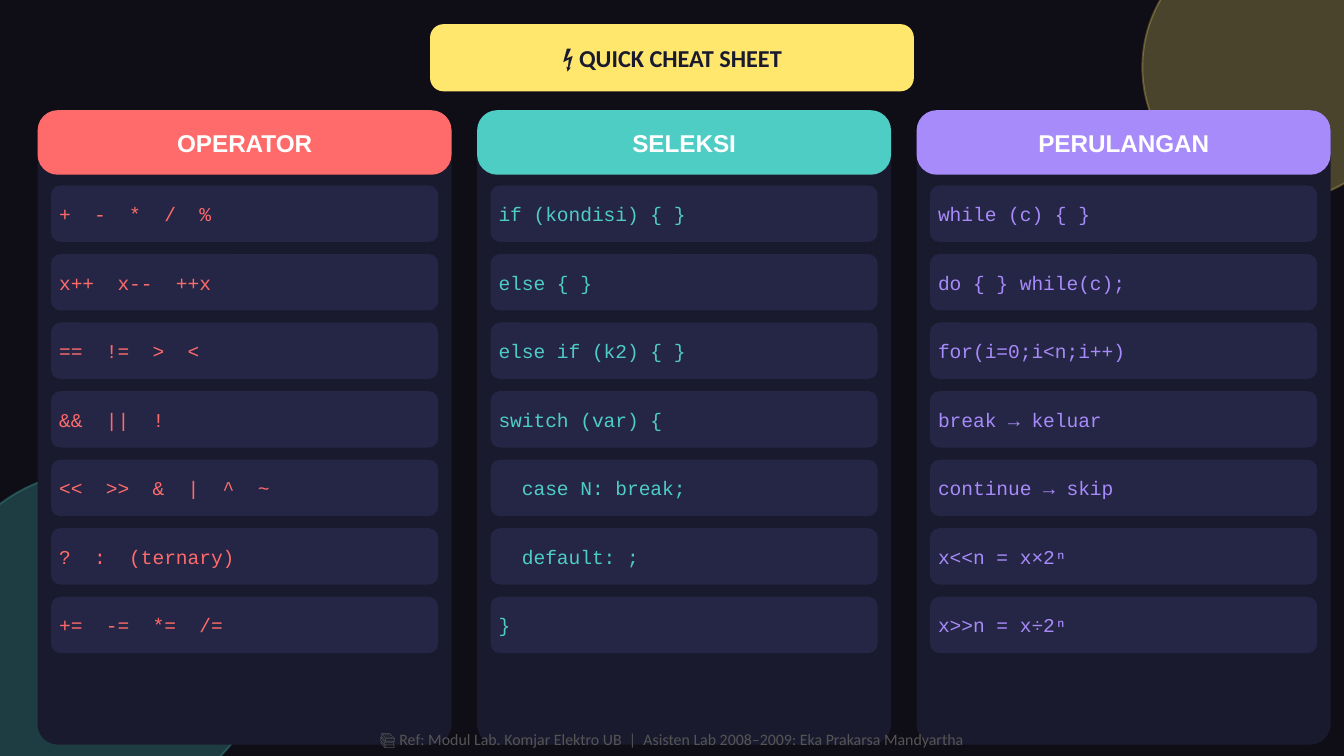
from pptx import Presentation
from pptx.dml.color import RGBColor
from pptx.enum.shapes import MSO_SHAPE as SHAPE
from pptx.enum.text import MSO_ANCHOR as ANCHOR, MSO_AUTO_SIZE as AUTO, PP_ALIGN as ALIGN
from pptx.oxml.ns import qn
from pptx.util import Inches, Pt
from lxml import etree

COLORS = {
    "bg": "0F0E17", "panel": "1A1A2E", "row": "252545", "white": "FFFFFF",
    "red": "FF6B6B", "teal": "4ECDC4", "violet": "A78BFA", "yellow": "FFE66D",
    "gray": "555555",
}
TITLE = "⚡ QUICK CHEAT SHEET"
FOOTER = "📚 Ref: Modul Lab. Komjar Elektro UB  |  Asisten Lab 2008–2009: Eka Prakarsa Mandyartha"
COLUMNS = [
    ("OPERATOR", "red", [
        "+  -  *  /  %", "x++  x--  ++x", "==  !=  >  <", "&&  ||  !",
        "<<  >>  &  |  ^  ~", "?  :  (ternary)", "+=  -=  *=  /=",
    ]),
    ("SELEKSI", "teal", [
        "if (kondisi) { }", "else { }", "else if (k2) { }", "switch (var) {",
        "  case N: break;", "  default: ;", "}",
    ]),
    ("PERULANGAN", "violet", [
        "while (c) { }", "do { } while(c);", "for(i=0;i<n;i++)", "break → keluar",
        "continue → skip", "x<<n = x×2ⁿ", "x>>n = x÷2ⁿ",
    ]),
]
CIRCLES = [(-0.5, 3.5, 2.5, "teal"), (8.5, -0.5, 2, "yellow")]
BANNER = (3.2, 0.18, 3.6, 0.5)
SLIDE_W = 10
SLIDE_H = SLIDE_W * 9 / 16
LEFT, TOP, COL_W, COL_H, COL_STEP = 0.28, 0.82, 3.08, 4.72, 3.27
HEAD_H, ROW_TOP, ROW_H, ROW_STEP = 0.48, 1.38, 0.42, 0.51
ROW_INSET, TEXT_INSET, TEXT_PAD = 0.1, 0.06, 0.02


def rgb(name):
    return RGBColor.from_string(COLORS[name])


def add_card(s, x, y, w, h, radius, color):
    sp = s.shapes.add_shape(SHAPE.ROUNDED_RECTANGLE, *map(Inches, (x, y, w, h)))
    sp.adjustments[0] = radius / min(w, h)
    sp.shadow.inherit = False
    sp.fill.solid()
    sp.fill.fore_color.rgb = rgb(color)
    sp.line.fill.background()
    return sp


def add_circle(s, x, y, size, color):
    sp = s.shapes.add_shape(SHAPE.OVAL, *map(Inches, (x, y, size, size)))
    sp.shadow.inherit = False
    for fill in (sp.fill, sp.line.fill):
        fill.solid()
        fill.fore_color.rgb = rgb(color)
    sp.line.width = Pt(1)
    for clr in sp.element.iter(qn("a:srgbClr")):
        etree.SubElement(clr, qn("a:alpha"), val="25000")


def set_text(sp, text, size, font, color, bold=False, align=ALIGN.CENTER):
    tf = sp.text_frame
    tf.word_wrap = True
    tf.auto_size = AUTO.NONE
    tf.vertical_anchor = ANCHOR.MIDDLE
    tf.margin_left = tf.margin_right = tf.margin_top = tf.margin_bottom = 0
    tf.text = text
    p = tf.paragraphs[0]
    p.alignment = align
    r = p.runs[0]
    r.font.size = Pt(size)
    r.font.name = font
    r.font.bold = bold
    r.font.color.rgb = rgb(color)


def add_label(s, x, y, w, h, *args, **kwargs):
    sp = s.shapes.add_textbox(*map(Inches, (x, y, w, h)))
    set_text(sp, *args, **kwargs)


def add_column(s, x, heading, color, rows):
    add_card(s, x, TOP, COL_W, COL_H, 0.15, "panel")
    add_card(s, x, TOP, COL_W, HEAD_H, 0.15, color)
    add_label(s, x, TOP, COL_W, HEAD_H, heading, 13, "Arial", "white", bold=True)
    row_x, row_w = x + ROW_INSET, COL_W - 2 * ROW_INSET
    for i, code in enumerate(rows):
        y = ROW_TOP + i * ROW_STEP
        add_card(s, row_x, y, row_w, ROW_H, 0.07, "row")
        add_label(s, row_x + TEXT_INSET, y + TEXT_PAD, row_w - 2 * TEXT_INSET,
                  ROW_H - 2 * TEXT_PAD, code, 10.5, "Courier New", color, align=ALIGN.LEFT)


def main():
    prs = Presentation()
    prs.slide_width, prs.slide_height = Inches(SLIDE_W), Inches(SLIDE_H)
    s = prs.slides.add_slide(prs.slide_layouts[5])
    s.background.fill.solid()
    s.background.fill.fore_color.rgb = rgb("bg")

    for circle in CIRCLES:
        add_circle(s, *circle)

    banner = add_card(s, *BANNER, 0.1, "yellow")
    title = s.shapes.title
    title.left, title.top, title.width, title.height = map(Inches, BANNER)
    set_text(title, TITLE, 13, "Calibri", "panel", bold=True)
    banner.element.addnext(title.element)

    for i, column in enumerate(COLUMNS):
        add_column(s, LEFT + i * COL_STEP, *column)

    add_label(s, 0, 5.38, SLIDE_W, 0.24, FOOTER, 8.5, "Calibri", "gray")
    prs.save("out.pptx")


if __name__ == "__main__":
    main()
